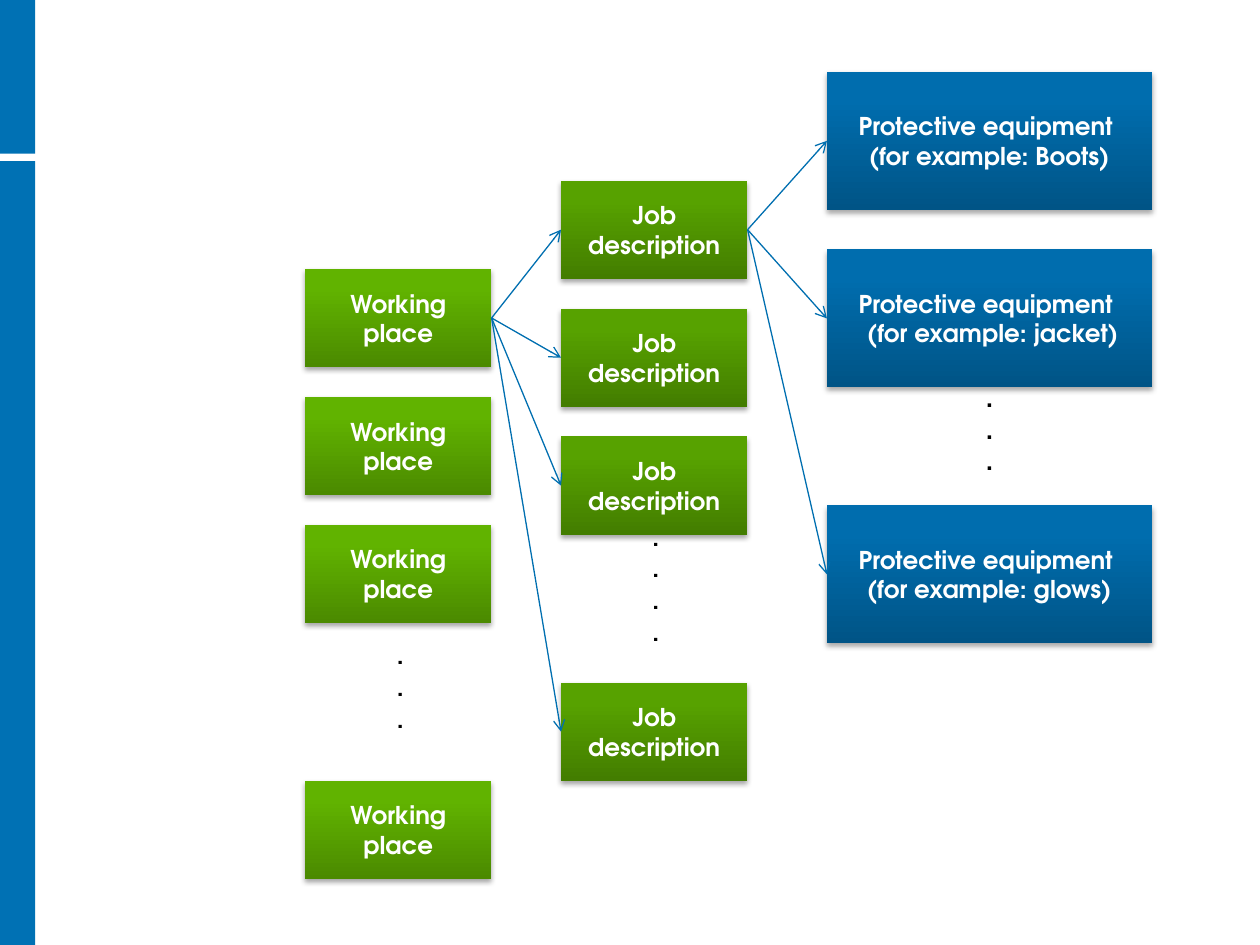
from lxml import etree
from pptx import Presentation
from pptx.dml.color import RGBColor
from pptx.enum.shapes import MSO_CONNECTOR, MSO_SHAPE
from pptx.enum.text import MSO_ANCHOR, PP_ALIGN
from pptx.oxml import parse_xml
from pptx.oxml.ns import nsdecls, qn
from pptx.util import Cm, Pt

RECTANGLE = MSO_SHAPE.RECTANGLE
STRAIGHT = MSO_CONNECTOR.STRAIGHT
MIDDLE = MSO_ANCHOR.MIDDLE
CENTER, LEFT = PP_ALIGN.CENTER, PP_ALIGN.LEFT
LEFT_SITE, RIGHT_SITE = 1, 3

FONT = "TeX Gyre Adventor"
BLANK_LAYOUT = 6
COLORS = {
    "bar": "0071B4",
    "arrow": "006FB0",
    "white": "FFFFFF",
    "black": "000000",
}
# Bottom and top colour of each kind of box
GRADIENTS = {
    "place": ("4B8A00", "61B300"),
    "job": ("437D00", "57A200"),
    "equipment": ("005486", "006DAE"),
}
SHADOW = (
    f'<a:effectLst {nsdecls("a")}>'
    '<a:outerShdw blurRad="39370" dist="22860" dir="5400000" rotWithShape="0">'
    '<a:srgbClr val="000000"><a:alpha val="35000"/></a:srgbClr>'
    "</a:outerShdw></a:effectLst>"
)

ROW_PITCH = 2.58
SMALL_BOX = (3.76, 1.98)
LARGE_BOX = (6.55, 2.78)
PLACE_LEFT, JOB_LEFT, EQUIPMENT_LEFT = 6.15, 11.31, 16.67
PLACE_TOPS = [5.42 + ROW_PITCH * row for row in (0, 1, 2, 4)]
JOB_TOPS = [3.64 + ROW_PITCH * row for row in (0, 1, 2)] + [13.76]
EQUIPMENT = [
    (1.45, "Protective equipment \n(for example: Boots)"),
    (5.03, "Protective equipment \n (for example: jacket)"),
    (10.19, "Protective equipment \n(for example: glows)"),
]


class Diagram:
    """Draws styled elements on one slide; lengths are in centimetres."""

    def __init__(self, slide):
        self.slide = slide

    def rectangle(self, left, top, width, height):
        shape = self.slide.shapes.add_shape(
            RECTANGLE, Cm(left), Cm(top), Cm(width), Cm(height))
        shape.shadow.inherit = False
        shape.line.fill.background()
        return shape

    def bar(self, top, height):
        shape = self.rectangle(0, top, 0.71, height)
        shape.fill.solid()
        shape.fill.fore_color.rgb = RGBColor.from_string(COLORS["bar"])

    def format_paragraph(self, paragraph, text, color, alignment, font=FONT):
        paragraph.text = text
        paragraph.alignment = alignment
        paragraph.space_before = Pt(1.4)
        paragraph.font.name = font
        paragraph.font.size = Pt(14)
        paragraph.font.bold = True
        paragraph.font.color.rgb = RGBColor.from_string(COLORS[color])

    def box(self, kind, left, top, size, text):
        shape = self.rectangle(left, top, *size)
        shape.fill.gradient()
        shape.fill.gradient_angle = 90
        stops = zip(shape.fill.gradient_stops, (0, 0.8), GRADIENTS[kind])
        for stop, position, color in stops:
            stop.position = position
            stop.color.rgb = RGBColor.from_string(color)
        properties = shape._element.spPr
        properties.replace(properties.find(qn("a:effectLst")), parse_xml(SHADOW))
        frame = shape.text_frame
        frame.word_wrap = True
        frame.vertical_anchor = MIDDLE
        self.format_paragraph(frame.paragraphs[0], text, "white", CENTER)
        return shape

    def dots(self, left, top, height, count, font=FONT):
        """Add a column of dots that stands for further boxes."""
        shape = self.slide.shapes.add_textbox(
            Cm(left), Cm(top), Cm(0.58), Cm(height))
        frame = shape.text_frame
        frame.word_wrap = True
        for index in range(count):
            paragraph = frame.add_paragraph() if index else frame.paragraphs[0]
            self.format_paragraph(paragraph, ".", "black", LEFT, font)

    def arrow(self, source, target):
        connector = self.slide.shapes.add_connector(STRAIGHT, 0, 0, 0, 0)
        connector.begin_connect(source, RIGHT_SITE)
        connector.end_connect(target, LEFT_SITE)
        connector.line.color.rgb = RGBColor.from_string(COLORS["arrow"])
        connector.line.width = Pt(0.75)
        etree.SubElement(
            connector.line._get_or_add_ln(), qn("a:tailEnd"), type="arrow")
        etree.SubElement(connector._element.spPr, qn("a:effectLst"))


def main():
    presentation = Presentation()
    presentation.slide_width = Cm(25.4)
    presentation.slide_height = Cm(19.05)
    layout = presentation.slide_layouts[BLANK_LAYOUT]
    diagram = Diagram(presentation.slides.add_slide(layout))

    diagram.bar(3.25, 15.8)
    diagram.bar(0, 3.1)

    diagram.dots(7.75, 12.78, 2.57, 3)
    diagram.dots(12.9, 10.39, 3.33, 4)
    diagram.dots(19.63, 7.59, 3.33, 3, "Arial")

    places = [diagram.box("place", PLACE_LEFT, top, SMALL_BOX, "Working place")
              for top in PLACE_TOPS]
    jobs = [diagram.box("job", JOB_LEFT, top, SMALL_BOX, "Job description")
            for top in JOB_TOPS]
    equipment = [diagram.box("equipment", EQUIPMENT_LEFT, top, LARGE_BOX, text)
                 for top, text in EQUIPMENT]

    for source, targets in ((places[0], jobs), (jobs[0], equipment)):
        for target in targets:
            diagram.arrow(source, target)

    presentation.save("out.pptx")


if __name__ == "__main__":
    main()
